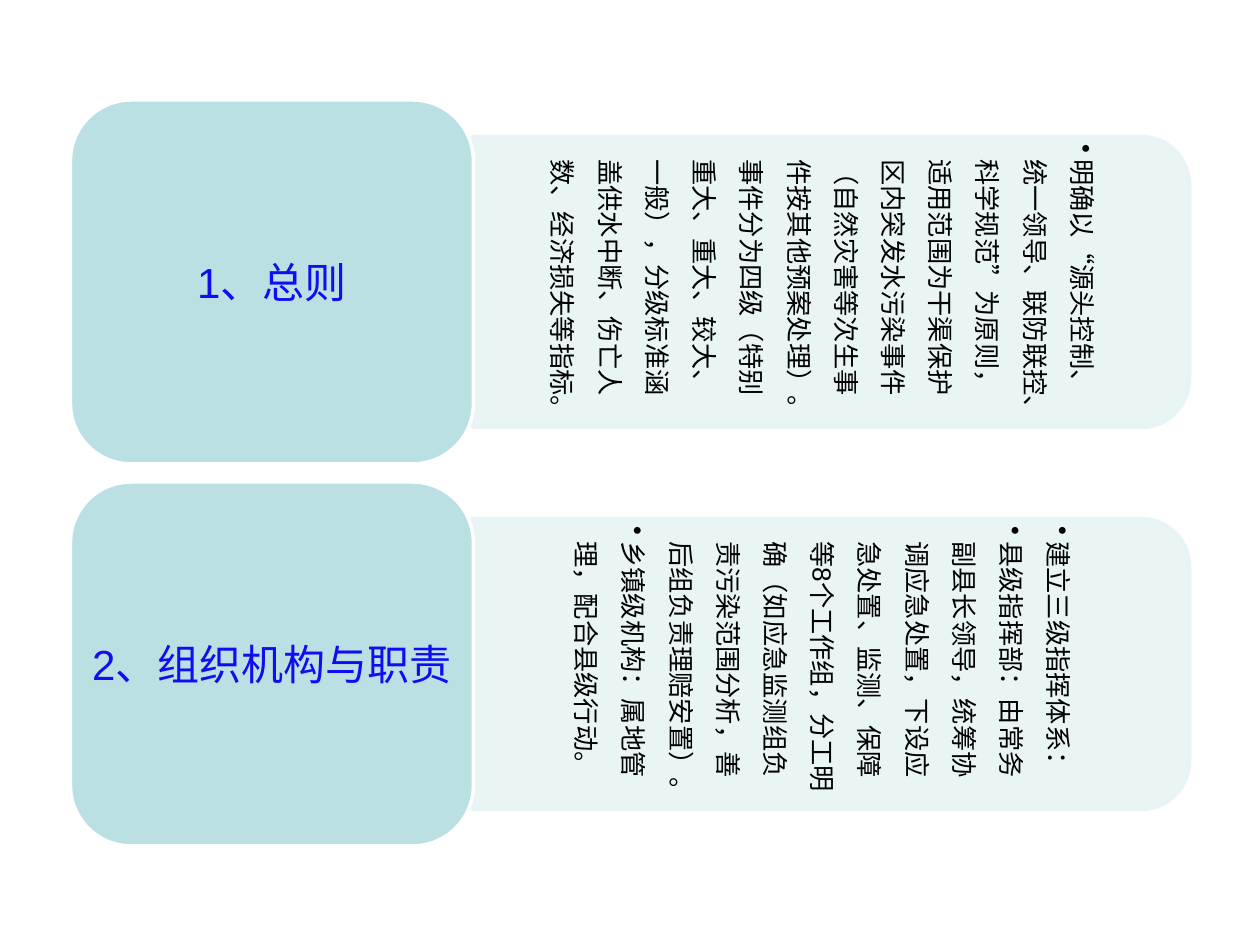
from dataclasses import dataclass

from pptx import Presentation
from pptx.dml.color import RGBColor
from pptx.enum.shapes import MSO_SHAPE
from pptx.enum.text import MSO_ANCHOR, PP_ALIGN
from pptx.oxml.ns import qn
from pptx.oxml.xmlchemy import OxmlElement
from pptx.util import Emu, Pt

PX = 914400 / 126
FONT = "Arial"
TEAL = RGBColor(0xBB, 0xE0, 0xE3)
PALE = RGBColor(0xE7, 0xF3, 0xF4)
WHITE = RGBColor(0xFF, 0xFF, 0xFF)
BLUE = RGBColor(0x11, 0x0C, 0xF2)
BLACK = RGBColor(0, 0, 0)

FIRST, STEP = 282, 382  # centre of the first row, distance to the next


@dataclass
class Box:
    x: int  # centre
    w: int
    h: int

    def place(self, mid: int) -> tuple[Emu, ...]:
        """Left, top, width and height when centred on height mid."""
        edges = (self.x - self.w / 2, mid - self.h / 2, self.w, self.h)
        return tuple(px(n) for n in edges)


@dataclass
class Row:
    title: str
    points: list[str]


LABEL = Box(272, 403, 364)
PANEL = Box(831, 291, 717)  # size before its quarter turn

ROWS = [
    Row("1、总则", [
        "明确以“源头控制、统一领导、联防联控、科学规范”为原则，"
        "适用范围为干渠保护区内突发水污染事件（自然灾害等次生事件按其他预案处理）。"
        "事件分为四级（特别重大、重大、较大、一般），"
        "分级标准涵盖供水中断、伤亡人数、经济损失等指标。",
    ]),
    Row("2、组织机构与职责", [
        "建立三级指挥体系：",
        "县级指挥部：由常务副县长领导，统筹协调应急处置，"
        "下设应急处置、监测、保障等8个工作组，"
        "分工明确（如应急监测组负责污染范围分析，善后组负责理赔安置）。",
        "乡镇级机构：属地管理，配合县级行动。",
    ]),
]


def px(n: float) -> Emu:
    return Emu(round(n * PX))


def style(para, size: int, color: RGBColor) -> None:
    para.font.name = FONT
    para.font.size = Pt(size)
    para.font.color.rgb = color


def add_shape(slide, kind, spot, fill: RGBColor, line: RGBColor):
    shape = slide.shapes.add_shape(kind, *spot)
    shape.shadow.inherit = False
    shape.fill.solid()
    shape.fill.fore_color.rgb = fill
    shape.line.color.rgb = line
    shape.line.width = Pt(2)
    return shape


def fade(shape, share: int) -> None:
    """Set the opacity of fill and line, in percent."""
    for color in shape.element.spPr.iter(qn("a:srgbClr")):
        alpha = OxmlElement("a:alpha")
        alpha.set("val", str(share * 1000))
        color.append(alpha)


def add_bullet(para) -> None:
    props = para._p.get_or_add_pPr()
    props.set("marL", str(px(15)))
    props.set("indent", str(-px(15)))
    mark = OxmlElement("a:buChar")
    mark.set("char", "•")
    props.append(mark)


def add_panel(slide, mid: int, points: list[str]) -> None:
    spot = PANEL.place(mid)
    plate = add_shape(slide, MSO_SHAPE.ROUND_2_SAME_RECTANGLE, spot, PALE, PALE)
    plate.rotation = 90
    fade(plate, 90)

    box = slide.shapes.add_textbox(*spot)
    box.rotation = 90
    frame = box.text_frame
    frame.word_wrap = True
    frame.vertical_anchor = MSO_ANCHOR.MIDDLE
    frame.margin_left = frame.margin_right = px(8)
    frame.margin_top = frame.margin_bottom = px(4)
    frame.text = "\n".join(points)
    for para in frame.paragraphs:
        para.level = 1
        para.line_spacing = 1.5
        add_bullet(para)
        style(para, 15, BLACK)


def add_label(slide, mid: int, title: str) -> None:
    label = add_shape(slide, MSO_SHAPE.ROUNDED_RECTANGLE, LABEL.place(mid),
                      TEAL, WHITE)
    frame = label.text_frame
    frame.word_wrap = False
    frame.vertical_anchor = MSO_ANCHOR.MIDDLE
    frame.text = title
    para = frame.paragraphs[0]
    para.alignment = PP_ALIGN.CENTER
    style(para, 24, BLUE)


def main() -> None:
    deck = Presentation()
    deck.slide_width, deck.slide_height = px(1260), px(945)
    slide = deck.slides.add_slide(deck.slide_layouts[6])
    for i, row in enumerate(ROWS):
        mid = FIRST + i * STEP
        add_panel(slide, mid, row.points)
        add_label(slide, mid, row.title)
    deck.save("out.pptx")


if __name__ == "__main__":
    main()
